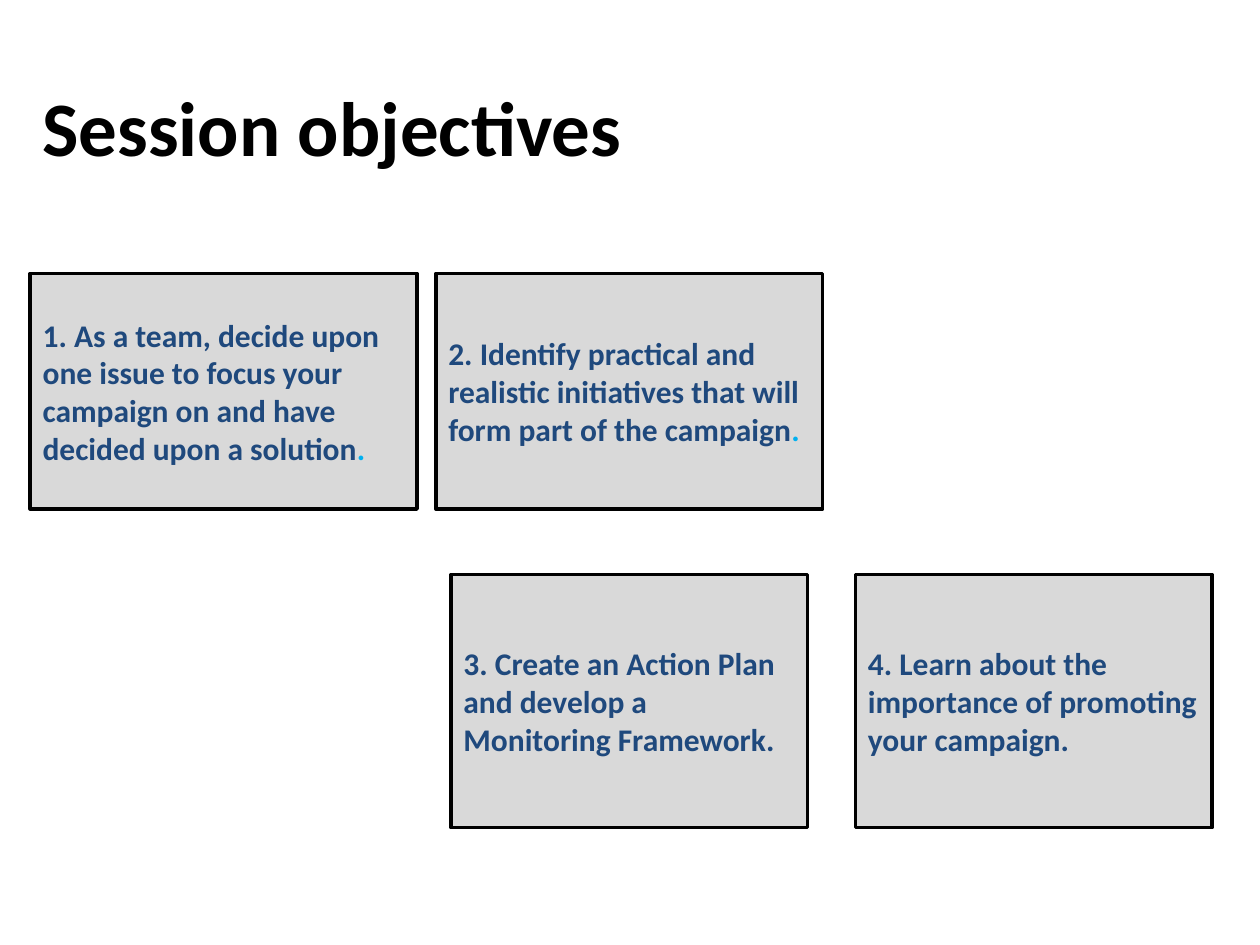
from dataclasses import dataclass

from pptx import Presentation
from pptx.dml.color import RGBColor
from pptx.enum.shapes import MSO_SHAPE as Shape
from pptx.enum.text import MSO_ANCHOR as Anchor, MSO_AUTO_SIZE as AutoSize, PP_ALIGN as Align
from pptx.util import Inches, Pt

COLORS = {
    "box": "D9D9D9",
    "line": "000000",
    "title": "000000",
    "body": "1F497D",
    "accent": "00B0F0",
}


@dataclass(frozen=True)
class Row:
    left: float
    top: float
    width: float
    height: float
    pitch: float
    objectives: tuple[str, ...]
    accent_stop: bool = False


ROWS = (
    Row(0.24, 2.17, 3.07, 1.87, 3.22, (
        "1. As a team, decide upon one issue to focus your campaign on "
        "and have decided upon a solution",
        "2. Identify practical and realistic initiatives that will form "
        "part of the campaign",
    ), accent_stop=True),
    Row(3.58, 4.56, 2.83, 2.01, 3.21, (
        "3. Create an Action Plan and develop a Monitoring Framework.",
        "4. Learn about the importance of promoting your campaign.",
    )),
)


def rgb(name: str) -> RGBColor:
    return RGBColor.from_string(COLORS[name])


def add_run(p, text: str, size: float, color: str) -> None:
    r = p.add_run()
    r.text = text
    for key, value in {"name": "Calibri", "size": Pt(size), "bold": True}.items():
        setattr(r.font, key, value)
    r.font.color.rgb = rgb(color)


def add_title(slide, text: str) -> None:
    tb = slide.shapes.add_textbox(Inches(0.24), Inches(0.58), Inches(4.86), Inches(0.84))
    tf = tb.text_frame
    tf.word_wrap = True
    tf.auto_size = AutoSize.SHAPE_TO_FIT_TEXT
    add_run(tf.paragraphs[0], text, 44, "title")


def add_row(slide, row: Row) -> None:
    """Draw one row of equally spaced objective boxes."""
    for i, text in enumerate(row.objectives):
        sp = slide.shapes.add_shape(
            Shape.RECTANGLE, Inches(row.left + i * row.pitch), Inches(row.top),
            Inches(row.width), Inches(row.height))
        sp.shadow.inherit = False
        sp.fill.solid()
        sp.fill.fore_color.rgb = rgb("box")
        sp.line.color.rgb = rgb("line")
        sp.line.width = Pt(2)
        tf = sp.text_frame
        tf.word_wrap = True
        tf.vertical_anchor = Anchor.MIDDLE
        p = tf.paragraphs[0]
        p.alignment = Align.LEFT
        add_run(p, text, 18, "body")
        if row.accent_stop:
            add_run(p, ".", 18, "accent")


def main() -> None:
    prs = Presentation()
    prs.slide_width, prs.slide_height = Inches(10), Inches(7.5)
    slide = prs.slides.add_slide(prs.slide_layouts[6])
    add_title(slide, "Session objectives")
    for row in ROWS:
        add_row(slide, row)
    prs.save("out.pptx")


if __name__ == "__main__":
    main()
